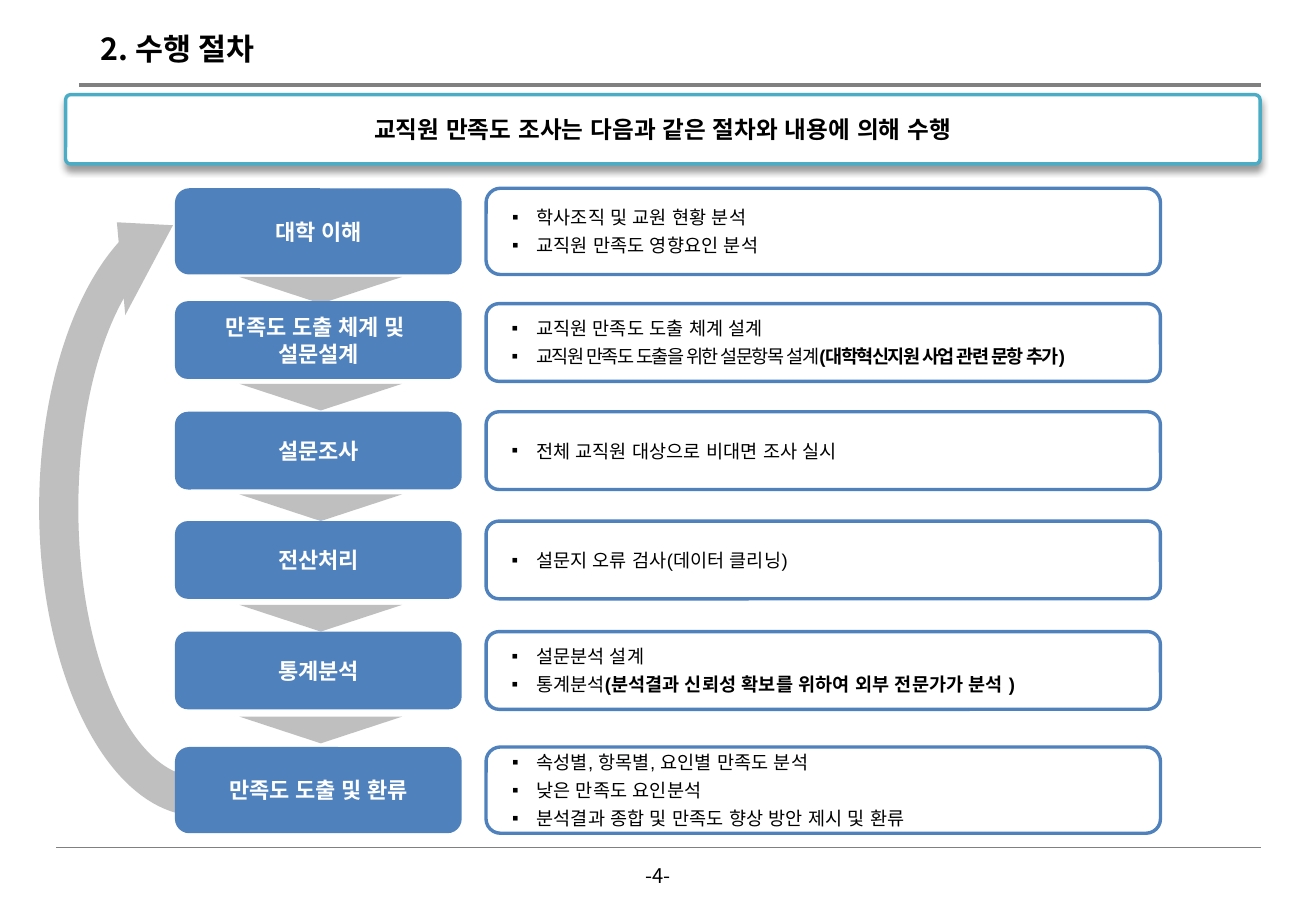
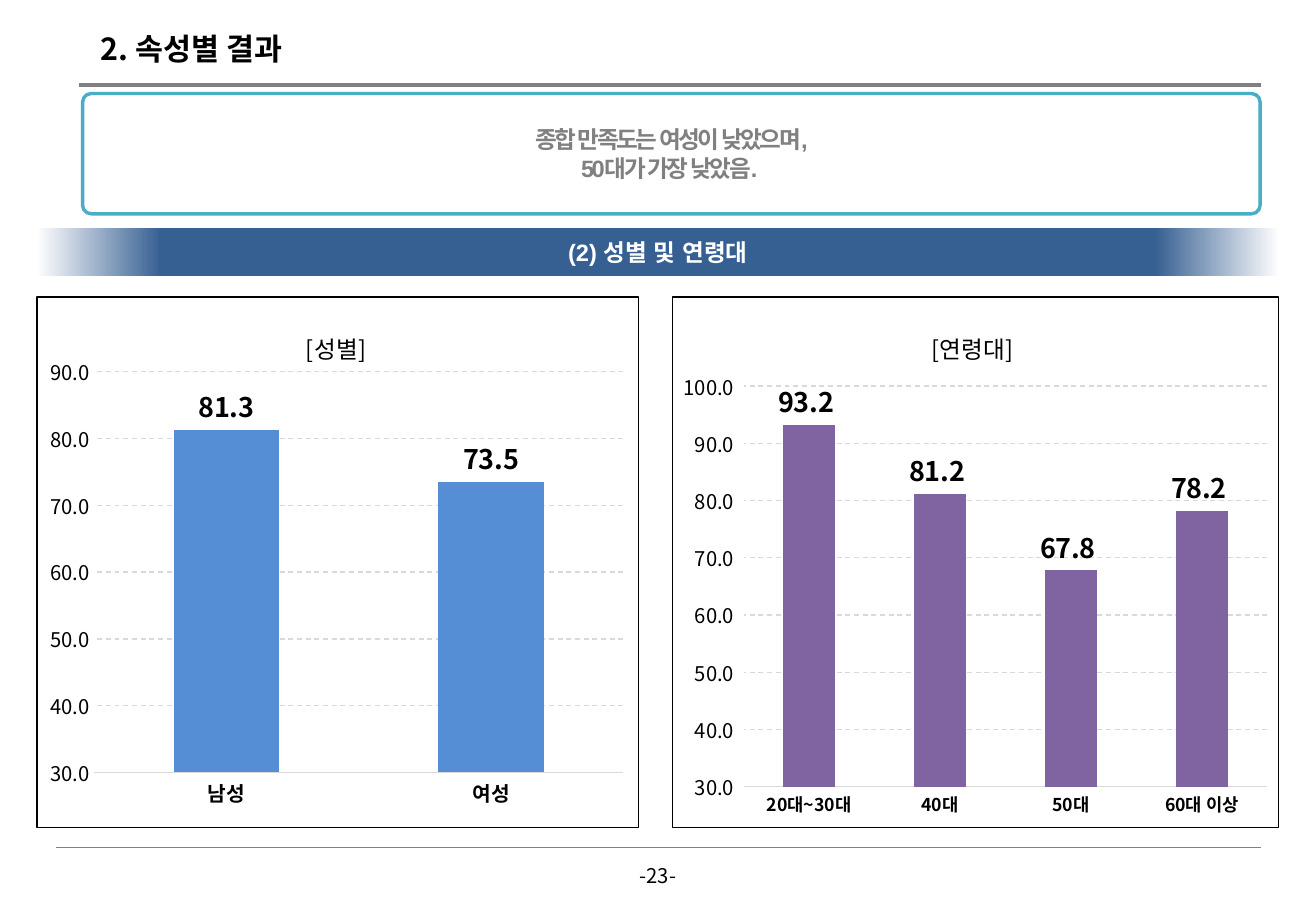
from dataclasses import dataclass
from typing import NamedTuple, Optional

from lxml import etree
from pptx import Presentation
from pptx.chart.data import CategoryChartData
from pptx.dml.color import RGBColor
from pptx.enum.chart import XL_CHART_TYPE as ChartType, XL_LABEL_POSITION as LabelPosition, XL_TICK_MARK as Tick
from pptx.enum.dml import MSO_LINE as Dash
from pptx.enum.shapes import MSO_CONNECTOR as Connector, MSO_SHAPE as Preset
from pptx.enum.text import MSO_ANCHOR as Anchor, MSO_AUTO_SIZE as AutoSize, PP_ALIGN as Align
from pptx.oxml import parse_xml
from pptx.oxml.ns import nsdecls, qn
from pptx.util import Inches, Pt


@dataclass(frozen=True)
class Theme:
    black: str = "000000"
    white: str = "FFFFFF"
    gray: str = "808080"
    arrow: str = "BFBFBF"
    grid: str = "D9D9D9"
    step: str = "4F81BD"
    frame: str = "4BACC6"
    band: str = "376092"
    sky: str = "558ED5"
    violet: str = "8064A2"
    heading_font: str = "Noto Sans CJK KR"
    text_font: str = "Arial"
    title: float = 18
    value: float = 16
    message: float = 14
    label: float = 13
    small: float = 12
    detail: float = 11
    category: float = 10.5


THEME = Theme()


class Frame(NamedTuple):
    left: float
    top: float
    width: float
    height: float

    def lengths(self) -> list:
        return [Inches(value) for value in self]


class Bullet(NamedTuple):
    text: str
    strong: str = ""
    spacing: float = 0


@dataclass(frozen=True)
class Step:
    top: float
    height: float
    label: str
    bullets: tuple
    arrow_top: Optional[float] = None
    detail_shift: float = 0


@dataclass(frozen=True)
class BarChart:
    frame: Frame
    title: str
    title_at: tuple
    values: dict
    color: str
    number_format: str
    maximum: float
    category_size: float
    plot_area: tuple


STEPS = (
    Step(1.55, 0.71, "대학 이해", (Bullet("학사조직 및 교원 현황 분석"), Bullet("교직원 만족도 영향요인 분석"))),
    Step(2.48, 0.64, "만족도 도출 체계 및 \n설문설계", (
        Bullet("교직원 만족도 도출 체계 설계"),
        Bullet("교직원 만족도 도출을 위한 설문항목 설계", "(대학혁신지원 사업 관련 문항 추가)", -1),
    ), 2.28, 0.02),
    Step(3.39, 0.64, "설문조사", (Bullet("전체 교직원 대상으로 비대면 조사 실시"),), 3.16),
    Step(4.29, 0.64, "전산처리", (Bullet("설문지 오류 검사(데이터 클리닝)"),), 4.07),
    Step(5.2, 0.64, "통계분석", (
        Bullet("설문분석 설계"),
        Bullet("통계분석", "(분석결과 신뢰성 확보를 위하여 외부 전문가가 분석 )"),
    ), 4.98),
    Step(6.15, 0.71, "만족도 도출 및 환류", (
        Bullet("속성별, 항목별, 요인별 만족도 분석"),
        Bullet("낮은 만족도 요인분석"),
        Bullet("분석결과 종합 및 만족도 향상 방안 제시 및 환류"),
    ), 5.9),
)

CHARTS = (
    BarChart(Frame(0.3, 2.44, 4.96, 4.38), "[성별]", (0.44, 0.05), {"남성": 81.3, "여성": 73.5},
             THEME.sky, "###0.0", 90, THEME.small, (0.095, 0.141, 0.88, 0.755)),
    BarChart(Frame(5.53, 2.44, 5, 4.38), "[연령대]", (0.42, 0.05),
             {"20대~30대": 93.2, "40대": 81.2, "50대": 67.8, "60대 이상": 78.2},
             THEME.violet, r"0.0_);[Red]\(0.0\)", 100, THEME.category, (0.117, 0.168, 0.864, 0.755)),
)


def rgb(color: str) -> RGBColor:
    return RGBColor.from_string(color)


def style_font(font, *, size: float, color: str = THEME.black, bold: bool = False,
               name: str = THEME.heading_font) -> None:
    font.size, font.bold, font.name = Pt(size), bold, name
    font.color.rgb = rgb(color)


def add_text(para, text: str, *, spacing: float = 0, name: str = THEME.text_font, **font_format) -> None:
    """Append text to a paragraph, turning newlines into line breaks."""
    for index, line in enumerate(text.split("\n")):
        if index:
            para.add_line_break()
        span = para.add_run()
        span.text = line
        style_font(span.font, name=name, **font_format)
        properties = span._r.get_or_add_rPr()
        etree.SubElement(properties, qn("a:ea")).set("typeface", name)
        if spacing:
            properties.set("spc", str(round(spacing * 100)))


def set_frame(shape, frame: Frame) -> None:
    shape.left, shape.top, shape.width, shape.height = frame.lengths()


def set_text_area(shape, insets: tuple = (0.1, 0.05, 0.1, 0.05), wrap: bool = True):
    area = shape.text_frame
    area.auto_size = AutoSize.NONE
    area.word_wrap = wrap
    area.vertical_anchor = Anchor.MIDDLE
    area.margin_left, area.margin_top, area.margin_right, area.margin_bottom = map(Inches, insets)
    return area


def paint(shape, fill: str, line: Optional[str] = None) -> None:
    shape.fill.solid()
    shape.fill.fore_color.rgb = rgb(fill)
    if line:
        shape.line.color.rgb = rgb(line)
        shape.line.width = Pt(2)
    else:
        shape.line.fill.background()


def add_box(page, preset, frame: Frame, fill: str, line: Optional[str] = None):
    box = page.shapes.add_shape(preset, *frame.lengths())
    box.shadow.inherit = False
    paint(box, fill, line)
    return box


def write_centered(shape, text: str, insets: tuple = (0.1, 0.05, 0.1, 0.05), **font_format) -> None:
    para = set_text_area(shape, insets).paragraphs[0]
    para.alignment = Align.CENTER
    add_text(para, text, bold=True, **font_format)


def add_rules(deck, page) -> None:
    """Put the header and footer lines on the slide master."""
    for left, top, width in ((0.65, 0.7, 2), (0.46, 6.98, 0.5)):
        rule = page.shapes.add_connector(Connector.STRAIGHT, *map(Inches, (left, top, 10.38, top)))
        rule.line.color.rgb = rgb(THEME.gray)
        rule.line.width = Pt(width)
        etree.SubElement(rule.element.spPr, qn("a:effectLst"))
        deck.slide_master.shapes.element.append(rule.element)


def add_heading(page, text: str, width: float, number: int) -> None:
    """Fill in the title and the page number."""
    title = page.shapes.title
    set_frame(title, Frame(0.73, 0.2, width, 0.4))
    para = set_text_area(title).paragraphs[0]
    para.alignment = Align.LEFT
    add_text(para, text, name=THEME.heading_font, size=THEME.title, bold=True)
    box = page.shapes.add_textbox(*Frame(5.14, 7.06, 0.55, 0.3).lengths())
    para = set_text_area(box, wrap=False).paragraphs[0]
    para.alignment = Align.CENTER
    add_text(para, f"-{number}-", name=THEME.heading_font, size=THEME.small)


def add_step(page, step: Step) -> None:
    if step.arrow_top:
        arrow = add_box(page, Preset.ISOSCELES_TRIANGLE, Frame(1.97, step.arrow_top, 1.34, 0.22), THEME.arrow)
        arrow.element.spPr.xfrm.set("flipV", "1")
    label = add_box(page, Preset.ROUNDED_RECTANGLE, Frame(1.44, step.top, 2.36, step.height), THEME.step)
    write_centered(label, step.label, size=THEME.label, color=THEME.white)
    detail = add_box(page, Preset.ROUNDED_RECTANGLE,
                     Frame(4, step.top + step.detail_shift, 5.55, step.height), THEME.white, THEME.step)
    area = set_text_area(detail, (0.18, 0.05, 0.1, 0.05))
    for index, bullet in enumerate(step.bullets):
        para = area.add_paragraph() if index else area.paragraphs[0]
        para.alignment = Align.LEFT
        para.space_after = Pt(3.3)
        properties = para._p.get_or_add_pPr()
        properties.set("marL", str(Inches(0.2)))
        properties.set("indent", str(-Inches(0.2)))
        etree.SubElement(properties, qn("a:buFont")).set("typeface", THEME.text_font)
        etree.SubElement(properties, qn("a:buChar")).set("char", "▪")
        add_text(para, bullet.text, size=THEME.detail, spacing=bullet.spacing)
        if bullet.strong:
            add_text(para, bullet.strong, size=THEME.detail, spacing=bullet.spacing, bold=True)


def build_procedure(page) -> None:
    loop = add_box(page, Preset.CIRCULAR_ARROW, Frame(-1.12, 2.65, 5.51, 3.07), THEME.arrow)
    loop.rotation = 270
    for index, value in enumerate((0.105, 7.645, 205.248, 108.754, 0.125)):
        loop.adjustments[index] = value
    add_heading(page, "2. 수행 절차", 1.6, 4)
    for step in STEPS:
        add_step(page, step)
    banner = add_box(page, Preset.ROUNDED_RECTANGLE, Frame(0.54, 0.78, 9.83, 0.57), THEME.white, THEME.frame)
    banner.adjustments[0] = 0.071
    banner.element.spPr.find(qn("a:effectLst")).append(parse_xml(
        f'<a:outerShdw {nsdecls("a")} blurRad="{Pt(4)}" dist="{Pt(3)}" dir="5400000" rotWithShape="0">'
        f'<a:srgbClr val="{THEME.black}"><a:alpha val="40000"/></a:srgbClr></a:outerShdw>'))
    write_centered(banner, "교직원 만족도 조사는 다음과 같은 절차와 내용에 의해 수행", (0.2, 0.04, 0.2, 0.04),
                   size=THEME.message)


def add_summary(page, lines: tuple) -> None:
    """Turn the body placeholder into a framed message."""
    body = page.placeholders[1]
    set_frame(body, Frame(0.68, 0.77, 9.69, 0.99))
    body.element.spPr.append(parse_xml(
        f'<a:prstGeom {nsdecls("a")} prst="roundRect"><a:avLst><a:gd name="adj" fmla="val 7100"/>'
        '</a:avLst></a:prstGeom>'))
    paint(body, THEME.white, THEME.frame)
    area = set_text_area(body, (0.2, 0.04, 0.2, 0.04))
    for index, line in enumerate(lines):
        para = area.add_paragraph() if index else area.paragraphs[0]
        para.alignment = Align.CENTER
        para.space_before = Pt(0)
        properties = para._p.get_or_add_pPr()
        properties.set("marL", "0")
        properties.set("indent", "0")
        etree.SubElement(properties, qn("a:buNone"))
        add_text(para, line, size=THEME.message, color=THEME.gray, bold=True, spacing=-1.5)


def add_band(page, text: str) -> None:
    band = add_box(page, Preset.RECTANGLE, Frame(0.3, 1.88, 10.23, 0.39), THEME.band)
    stops = ((0, THEME.white), (10, THEME.band), (90, THEME.band), (100, THEME.white))
    marks = "".join(f'<a:gs pos="{place * 1000}"><a:srgbClr val="{color}"/></a:gs>' for place, color in stops)
    properties = band.element.spPr
    properties.replace(properties.find(qn("a:solidFill")), parse_xml(
        f'<a:gradFill {nsdecls("a")}><a:gsLst>{marks}</a:gsLst><a:lin ang="0" scaled="0"/></a:gradFill>'))
    write_centered(band, text, size=THEME.message, color=THEME.white)


def place(element, index: int, values: tuple, inner: bool = False) -> None:
    """Give a chart part a manual layout of x, y and, if present, width and height."""
    for old in element.findall(qn("c:layout")):
        element.remove(old)
    target = '<c:layoutTarget val="inner"/>' if inner else ""
    modes = '<c:xMode val="edge"/><c:yMode val="edge"/>'
    sizes = "".join(f'<c:{key} val="{value}"/>' for key, value in zip("xywh", values))
    element.insert(index, parse_xml(
        f'<c:layout {nsdecls("c")}><c:manualLayout>{target}{modes}{sizes}</c:manualLayout></c:layout>'))


def add_bar_chart(page, item: BarChart) -> None:
    data = CategoryChartData()
    data.categories = list(item.values)
    data.add_series("Series 1", list(item.values.values()))
    chart = page.shapes.add_chart(ChartType.COLUMN_CLUSTERED, *item.frame.lengths(), data).chart
    style_font(chart.font, size=10)
    chart.has_legend = False
    add_text(chart.chart_title.text_frame.paragraphs[0], item.title, name=THEME.heading_font, size=THEME.message)
    place(chart.chart_title._element, 1, item.title_at)
    place(chart.element.find(".//" + qn("c:plotArea")), 0, item.plot_area, inner=True)
    chart.element.find(qn("c:chart")).addnext(parse_xml(
        f'<c:spPr {nsdecls("c", "a")}><a:noFill/><a:ln w="{Pt(0.75)}"><a:solidFill>'
        f'<a:srgbClr val="{THEME.black}"/></a:solidFill></a:ln></c:spPr>'))
    plot = chart.plots[0]
    plot.gap_width, plot.vary_by_categories, plot.has_data_labels = 150, False, True
    bars = plot.series[0].format.fill
    bars.solid()
    bars.fore_color.rgb = rgb(item.color)
    labels = plot.data_labels
    labels.show_value, labels.position = True, LabelPosition.OUTSIDE_END
    style_font(labels.font, size=THEME.value, bold=True)
    categories, values = chart.category_axis, chart.value_axis
    style_font(categories.tick_labels.font, size=item.category_size, bold=True)
    style_font(values.tick_labels.font, size=THEME.small)
    for numbers in (labels, values.tick_labels):
        numbers.number_format, numbers.number_format_is_linked = item.number_format, False
    for axis in (categories, values):
        axis.major_tick_mark = axis.minor_tick_mark = Tick.NONE
    values.minimum_scale, values.maximum_scale, values.major_unit = 30, item.maximum, 10
    values.format.line.fill.background()
    grid = values.major_gridlines.format.line
    for line in (categories.format.line, grid):
        line.color.rgb, line.width = rgb(THEME.grid), Pt(0.75)
    grid.dash_style = Dash.DASH


def build_results(page) -> None:
    add_heading(page, "2. 속성별 결과", 2.1, 23)
    add_summary(page, ("종합 만족도는 여성이 낮았으며,", "50대가 가장 낮았음. "))
    add_band(page, "(2) 성별 및 연령대")
    for item in CHARTS:
        add_bar_chart(page, item)


def main() -> None:
    deck = Presentation()
    deck.slide_width, deck.slide_height = Inches(10.83), Inches(7.5)
    procedure = deck.slides.add_slide(deck.slide_layouts[5])
    add_rules(deck, procedure)
    build_procedure(procedure)
    build_results(deck.slides.add_slide(deck.slide_layouts[1]))
    deck.save("out.pptx")


if __name__ == "__main__":
    main()
